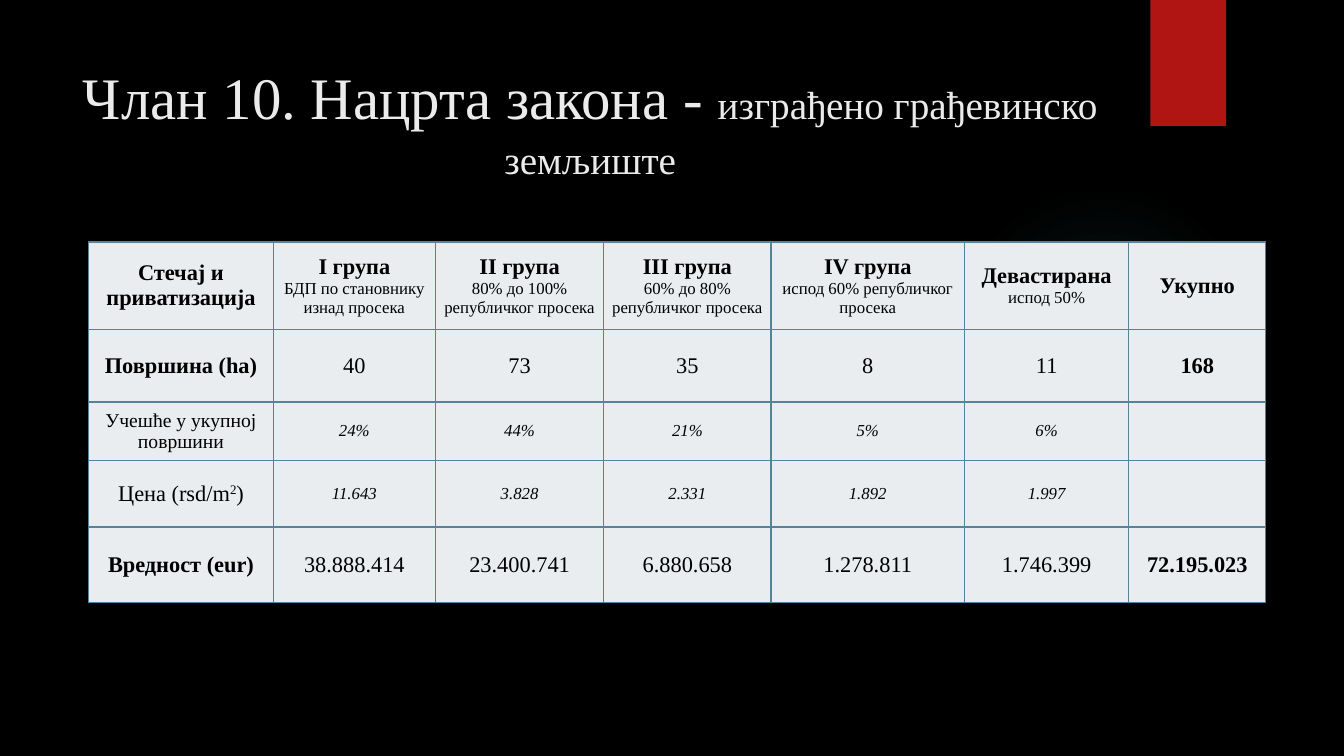
from dataclasses import dataclass

from pptx import Presentation
from pptx.dml.color import RGBColor
from pptx.enum.shapes import MSO_SHAPE
from pptx.enum.text import MSO_ANCHOR, PP_ALIGN
from pptx.oxml import parse_xml
from pptx.oxml.ns import nsdecls, qn
from pptx.util import Pt

CENTER = PP_ALIGN.CENTER
MIDDLE, TOP = MSO_ANCHOR.MIDDLE, MSO_ANCHOR.TOP
OVAL, RECTANGLE = MSO_SHAPE.OVAL, MSO_SHAPE.RECTANGLE

FONT = "Times New Roman"
BLACK, RED, GLOW = "000000", "B01513", "50B9C1"
TITLE_COLOR, CELL_COLOR, BORDER_COLOR = "EBEBEB", "E9EDEF", "54849A"
COLUMN_WIDTHS = (131.8, 115.9, 120.2, 119.5, 138.2, 117.4, 97.9)


@dataclass(frozen=True)
class Run:
    text: str
    size: float = 16
    bold: bool = False
    italic: bool = False
    superscript: bool = False


@dataclass(frozen=True)
class Group:
    name: str
    criterion: str = ""


@dataclass(frozen=True)
class Row:
    height: float
    label: tuple[Run, ...]
    values: tuple[str, ...]
    total: str = ""
    value_size: float = 16
    value_italic: bool = False


HEADER_HEIGHT = 62.6
GROUPS = (
    Group("Стечај и приватизација"),
    Group("I група", "БДП по становнику изнад просека"),
    Group("II група", "80% до 100% републичког просека"),
    Group("III група", "60% до 80% републичког просека"),
    Group("IV група", "испод 60% републичког просека"),
    Group("Девастирана", "испод 50%"),
    Group("Укупно"),
)
ROWS = (
    Row(51.8, (Run("Површина (ha)", bold=True),),
        ("40", "73", "35", "8", "11"), "168"),
    Row(41.8, (Run("Учешће у укупној површини", 14),),
        ("24%", "44%", "21%", "5%", "6%"), value_size=12, value_italic=True),
    Row(47.5, (Run("Цена (rsd/m"), Run("2", superscript=True), Run(")")),
        ("11.643", "3.828", "2.331", "1.892", "1.997"),
        value_size=12, value_italic=True),
    Row(54, (Run("Вредност (eur)", bold=True),),
        ("38.888.414", "23.400.741", "6.880.658", "1.278.811", "1.746.399"),
        "72.195.023"),
)


def paint(fill, color: str) -> None:
    fill.solid()
    fill.fore_color.rgb = RGBColor.from_string(color)


def add_runs(p, runs: tuple[Run, ...], color: str) -> None:
    p.alignment = CENTER
    for run in runs:
        r = p.add_run()
        r.text = run.text
        r.font.name = FONT
        r.font.size = Pt(run.size)
        r.font.bold = run.bold
        r.font.italic = run.italic
        paint(r.font.fill, color)
        if run.superscript:
            r.font._element.set("baseline", "30000")


def add_plain_shape(slide, kind, left: float, top: float,
                    width: float, height: float):
    sp = slide.shapes.add_shape(kind, Pt(left), Pt(top), Pt(width), Pt(height))
    sp.shadow.inherit = False
    sp.line.fill.background()
    return sp


def add_glow(slide) -> None:
    sp = add_plain_shape(slide, OVAL, 677.5, 131.8, 221.8, 221.8)
    sp.fill.background()
    stops = "".join(
        f'<a:gs pos="{pos * 1000}"><a:srgbClr val="{GLOW}">'
        f'<a:alpha val="{alpha * 1000}"/></a:srgbClr></a:gs>'
        for pos, alpha in ((0, 7), (36, 6), (69, 0), (100, 0)))
    gradient = parse_xml(
        f'<a:gradFill {nsdecls("a")} rotWithShape="1"><a:gsLst>{stops}</a:gsLst>'
        '<a:path path="circle"><a:fillToRect l="50000" t="50000" r="50000" '
        'b="50000"/></a:path></a:gradFill>')
    properties = sp._element.spPr
    properties.replace(properties.find(qn("a:noFill")), gradient)


def add_title(slide) -> None:
    title = slide.shapes.title
    title.left, title.top = Pt(51.1), Pt(36)
    title.width, title.height = Pt(740.9), Pt(110.2)
    tf = title.text_frame
    tf.word_wrap = True
    tf.vertical_anchor = TOP
    tf.margin_left = tf.margin_right = Pt(6)
    p = tf.paragraphs[0]
    p.line_spacing = 1.08
    add_runs(p, (Run("Члан 10. Нацрта закона - ", 42),
                 Run("изграђено грађевинско земљиште", 28)), TITLE_COLOR)


def add_borders(cell) -> None:
    tc_pr = cell._tc.get_or_add_tcPr()
    for side in ("lnL", "lnR", "lnT", "lnB"):
        tc_pr.append(parse_xml(
            f'<a:{side} {nsdecls("a")} w="{Pt(1)}"><a:solidFill>'
            f'<a:srgbClr val="{BORDER_COLOR}"/></a:solidFill></a:{side}>'))


def fill_cell(cell, paragraphs: list[tuple[Run, ...]], side_margin: float) -> None:
    add_borders(cell)
    paint(cell.fill, CELL_COLOR)
    cell.vertical_anchor = MIDDLE
    cell.margin_left = cell.margin_right = Pt(side_margin)
    cell.margin_top = cell.margin_bottom = Pt(0)
    tf = cell.text_frame
    for i, runs in enumerate(paragraphs):
        p = tf.add_paragraph() if i else tf.paragraphs[0]
        add_runs(p, runs, BLACK)


def add_land_table(slide) -> None:
    heights = (HEADER_HEIGHT, *(row.height for row in ROWS))
    table = slide.shapes.add_table(
        len(heights), len(COLUMN_WIDTHS), Pt(63.4), Pt(172.8),
        Pt(sum(COLUMN_WIDTHS)), Pt(sum(heights))).table
    table.first_row = table.horz_banding = False
    for column, width in zip(table.columns, COLUMN_WIDTHS):
        column.width = Pt(width)
    for table_row, height in zip(table.rows, heights):
        table_row.height = Pt(height)

    for c, group in enumerate(GROUPS):
        paragraphs = [(Run(group.name, bold=True),)]
        if group.criterion:
            paragraphs.append((Run(group.criterion, 12),))
        fill_cell(table.cell(0, c), paragraphs, 5)

    for r, row in enumerate(ROWS, 1):
        fill_cell(table.cell(r, 0), [row.label], 5)
        for c, value in enumerate(row.values, 1):
            run = Run(value, row.value_size, italic=row.value_italic)
            fill_cell(table.cell(r, c), [(run,)], 0)
        total = [(Run(row.total, bold=True),)] if row.total else []
        fill_cell(table.cell(r, len(GROUPS) - 1), total, 0)


def main() -> None:
    prs = Presentation()
    prs.slide_width, prs.slide_height = Pt(960), Pt(540)
    slide = prs.slides.add_slide(prs.slide_layouts[5])
    paint(slide.background.fill, BLACK)
    add_glow(slide)
    ribbon = add_plain_shape(slide, RECTANGLE, 821.8, 0, 54, 90)
    paint(ribbon.fill, RED)
    add_title(slide)
    add_land_table(slide)
    prs.save("out.pptx")


if __name__ == "__main__":
    main()
